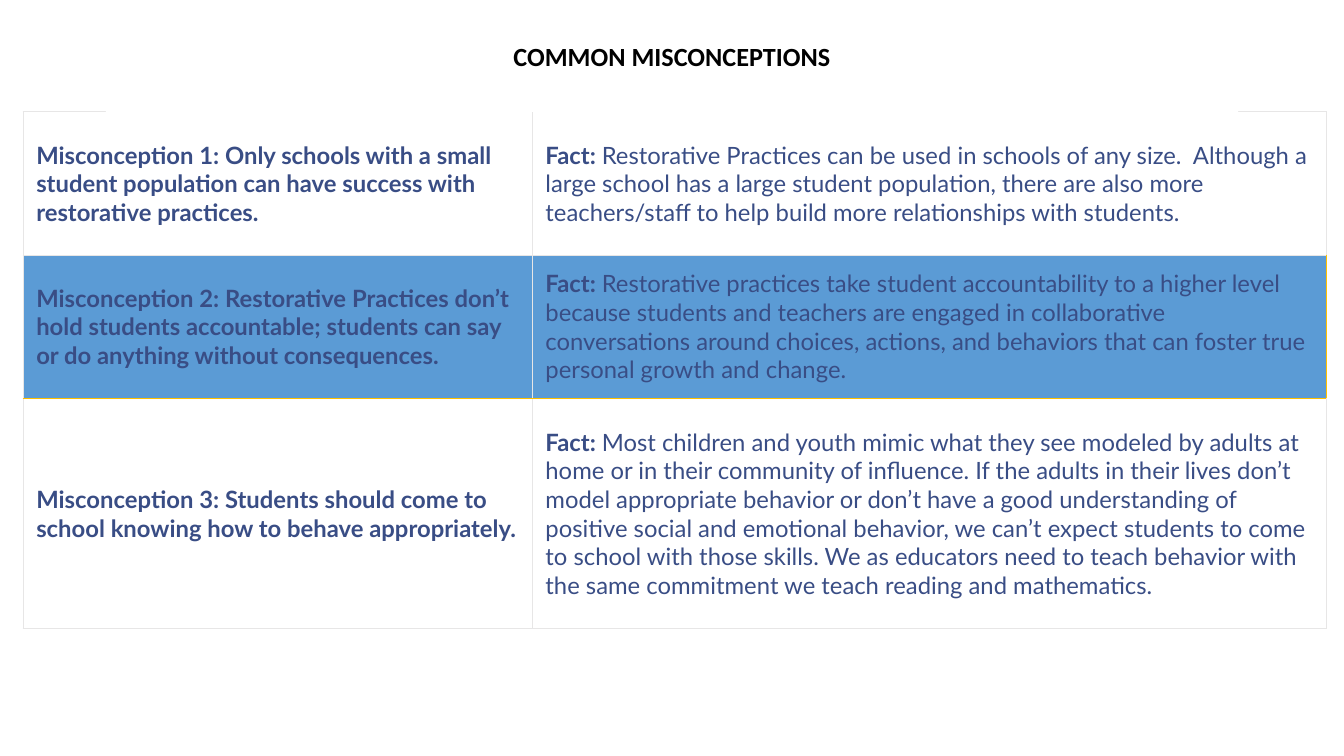
from lxml import etree
from pptx import Presentation
from pptx.dml.color import RGBColor
from pptx.enum.shapes import MSO_SHAPE
from pptx.enum.text import MSO_ANCHOR, PP_ALIGN
from pptx.oxml.ns import qn
from pptx.util import Inches, Pt

RECTANGLE = MSO_SHAPE.RECTANGLE
MIDDLE = MSO_ANCHOR.MIDDLE
CENTER = PP_ALIGN.CENTER

WHITE, BLACK, NAVY = "FFFFFF", "000000", "394D85"
BLUE, GREY, GOLD = "5B9BD5", "E7E6E6", "FFC000"

COLUMN_WIDTHS = [5.05, 7.88]
ROW_HEIGHTS = [1.42, 1.42, 2.29]
HIGHLIGHTED_ROW = 1

MISCONCEPTIONS = [
    ("Misconception 1: Only schools with a small student population can have "
     "success with restorative practices.",
     "Restorative Practices can be used in schools of any size.  Although a large "
     "school has a large student population, there are also more teachers/staff to "
     "help build more relationships with students."),
    ("Misconception 2: Restorative Practices don’t hold students accountable; "
     "students can say or do anything without consequences.",
     "Restorative practices take student accountability to a higher level because "
     "students and teachers are engaged in collaborative conversations around "
     "choices, actions, and behaviors that can foster true personal growth and change."),
    ("Misconception 3: Students should come to school knowing how to behave "
     "appropriately.",
     "Most children and youth mimic what they see modeled by adults at home or in "
     "their community of influence. If the adults in their lives don’t model "
     "appropriate behavior or don’t have a good understanding of positive social and "
     "emotional behavior, we can’t expect students to come to school with those "
     "skills. We as educators need to teach behavior with the same commitment we "
     "teach reading and mathematics."),
]


def color(hex_string):
    return RGBColor.from_string(hex_string)


class SlideBuilder:
    """Holds the text style and the current slide."""
    title_font, title_size = "Calibri", 18.7
    body_font, body_size = "Lato", 17
    inset = Inches(0.13)
    border_width = Pt(0.75)

    def __init__(self, slide):
        self.slide = slide

    def set_margins(self, holder):
        holder.margin_left = holder.margin_right = self.inset
        holder.margin_top = holder.margin_bottom = self.inset
        holder.vertical_anchor = MIDDLE

    def format_run(self, run, name, size, hex_string, bold):
        run.font.name = name
        run.font.size = Pt(size)
        run.font.bold = bold
        run.font.color.rgb = color(hex_string)

    def title(self, text, left, top, width, height):
        shape = self.slide.shapes.add_shape(
            RECTANGLE, Inches(left), Inches(top), Inches(width), Inches(height))
        shape.shadow.inherit = False
        shape.fill.solid()
        shape.fill.fore_color.rgb = color(WHITE)
        shape.line.fill.background()
        frame = shape.text_frame
        frame.word_wrap = True
        self.set_margins(frame)
        frame.text = text
        paragraph = frame.paragraphs[0]
        paragraph.alignment = CENTER
        self.format_run(paragraph.runs[0], self.title_font, self.title_size, BLACK, True)

    def table(self, left, top, widths, heights):
        table = self.slide.shapes.add_table(
            len(heights), len(widths), Inches(left), Inches(top),
            Inches(sum(widths)), Inches(sum(heights))).table
        table.first_row = table.horz_banding = False
        for column, width in zip(table.columns, widths):
            column.width = Inches(width)
        for row, height in zip(table.rows, heights):
            row.height = Inches(height)
        return table

    def cell(self, cell, parts, fill, borders):
        """Parts are (text, bold) pairs; borders map a side to its colour."""
        self.set_margins(cell)
        paragraph = cell.text_frame.paragraphs[0]
        for text, bold in parts:
            run = paragraph.add_run()
            run.text = text
            self.format_run(run, self.body_font, self.body_size, NAVY, bold)
        properties = cell._tc.get_or_add_tcPr()
        for side in "LRTB":
            line = etree.SubElement(properties, qn(f"a:ln{side}"), w=str(self.border_width))
            solid = etree.SubElement(line, qn("a:solidFill"))
            etree.SubElement(solid, qn("a:srgbClr"), val=borders[side])
        cell.fill.solid()
        cell.fill.fore_color.rgb = color(fill)


def main():
    presentation = Presentation()
    presentation.slide_width = Inches(13.33)
    presentation.slide_height = Inches(7.5)
    builder = SlideBuilder(presentation.slides.add_slide(presentation.slide_layouts[6]))

    # Table of misconceptions and facts
    table = builder.table(0.23, 1.11, COLUMN_WIDTHS, ROW_HEIGHTS)
    for row, (misconception, fact) in enumerate(MISCONCEPTIONS):
        highlighted = row == HIGHLIGHTED_ROW
        contents = [[(misconception, True)], [("Fact: ", True), (fact, False)]]
        for column, parts in enumerate(contents):
            # Gold runs below the highlighted row and along its right end
            borders = dict.fromkeys("LRTB", GREY)
            if highlighted:
                borders["B"] = GOLD
                if column == len(contents) - 1:
                    borders["R"] = GOLD
            elif row == HIGHLIGHTED_ROW + 1:
                borders["T"] = GOLD
            builder.cell(table.cell(row, column), parts,
                         BLUE if highlighted else WHITE, borders)

    # Title
    builder.title("COMMON MISCONCEPTIONS", 1.05, 0, 11.23, 1.11)

    presentation.save("out.pptx")


if __name__ == "__main__":
    main()
